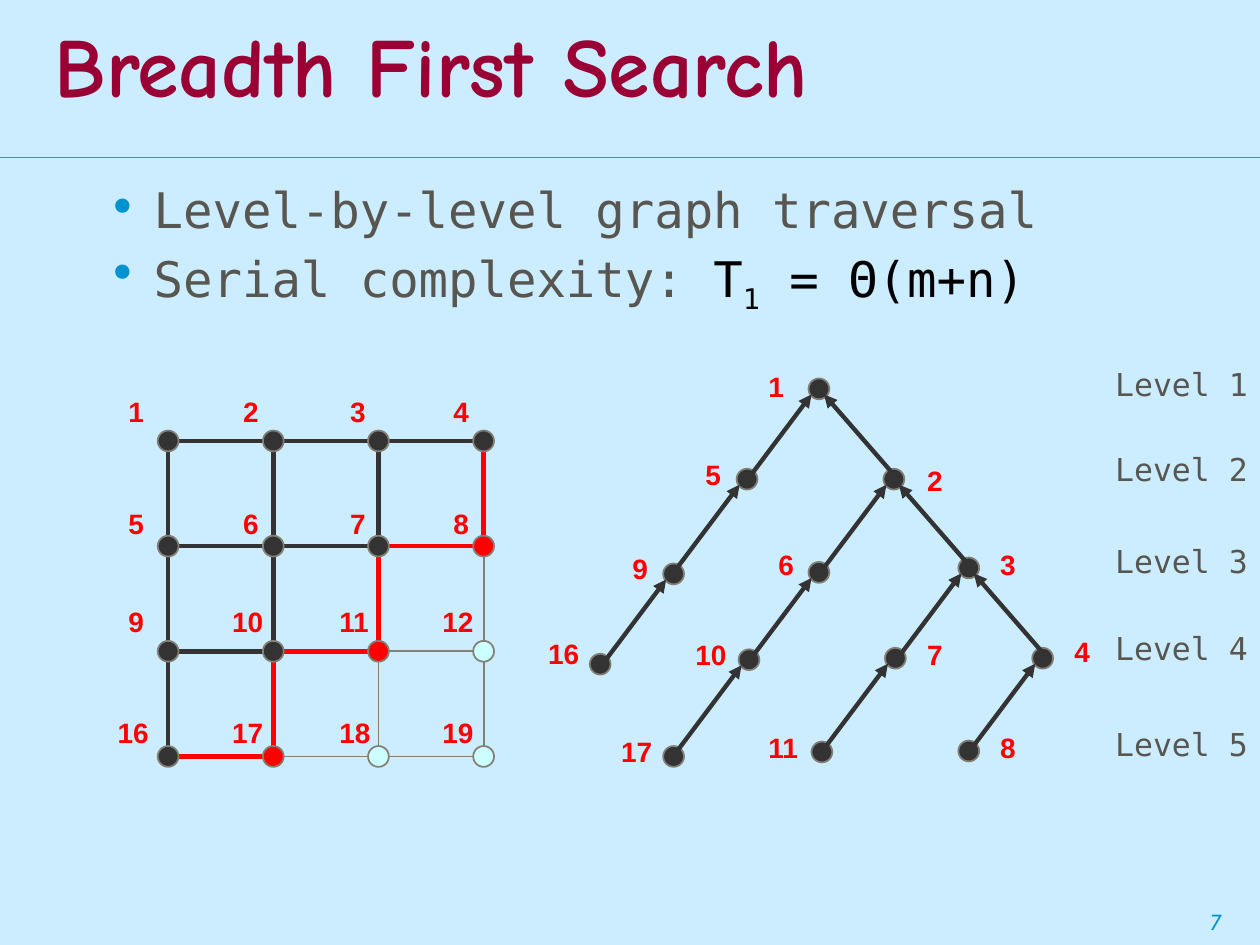
import pptx
import pptx.dml.color
import pptx.enum.shapes
import pptx.enum.text
import pptx.oxml.ns
import pptx.util
from pptx.util import Cm, Pt

RGBColor = pptx.dml.color.RGBColor
SKY = RGBColor(0xCC, 0xEC, 0xFF)
MAROON = RGBColor(0x99, 0x00, 0x33)
BLUE = RGBColor(0x00, 0x93, 0xD0)
BLACK = RGBColor(0, 0, 0)
TEXT_GRAY = RGBColor(0x58, 0x56, 0x50)
LINE_GRAY = RGBColor(0x82, 0x7F, 0x77)
DARK = RGBColor(0x33, 0x33, 0x33)
RED = RGBColor(0xFF, 0, 0)
PALE = RGBColor(0xCC, 0xFF, 0xFF)

MONO = "DejaVu Sans Mono"
TITLE_FONT = {"name": "Comic Neue", "size": Pt(48), "bold": True}
BODY_FONT = {"name": MONO, "size": Pt(28)}
LEVEL_FONT = {"name": MONO, "size": Pt(18)}
LABEL_FONT = {"name": "Arial", "size": Pt(16), "bold": True}
PAGE_FONT = {"name": MONO, "size": Pt(12), "italic": True}

NODE_SIZE = 0.42
RADIUS = NODE_SIZE / 2
GRID_LEFT, GRID_TOP, GRID_STEP = 3.39, 8.89, 2.12
GRID_NUMBERS = [[1, 2, 3, 4], [5, 6, 7, 8], [9, 10, 11, 12], [16, 17, 18, 19]]
LABEL_COLUMNS = [2.34, 4.65, 6.81, 8.89]
LABEL_ROWS = [7.82, 10.08, 12.07, 14.3]
FRONTIER = 3  # row + column of the first node on each newly explored edge

# number: (node centre, label corner)
TREE_NODES = {
    1: ((16.51, 7.84), (15.24, 7.32)),
    5: ((15.06, 9.66), (13.97, 9.09)),
    2: ((18.02, 9.66), (18.44, 9.22)),
    9: ((13.58, 11.57), (12.5, 11)),
    6: ((16.51, 11.54), (15.44, 10.92)),
    3: ((19.53, 11.45), (19.91, 10.92)),
    16: ((12.1, 13.39), (10.8, 12.7)),
    10: ((15.1, 13.3), (13.77, 12.73)),
    7: ((18.05, 13.27), (18.44, 12.73)),
    4: ((21.02, 13.27), (21.41, 12.67)),
    17: ((13.58, 15.25), (12.27, 14.68)),
    11: ((16.57, 15.16), (15.24, 14.6)),
    8: ((19.53, 15.14), (19.91, 14.6)),
}
LEFT_PARENTS = [1, 5, 2, 9, 6, 3, 4, 7, 10]
RIGHT_PARENTS = [1, 2, 3]
LEVEL_TOPS = [7.39, 9.09, 10.95, 12.7, 14.63]


def add_xml(parent, tag, **attributes):
    child = parent.makeelement(pptx.oxml.ns.qn(tag), attributes)
    parent.append(child)
    return child


class SlideBuilder:
    def __init__(self, presentation):
        self.slide = presentation.slides.add_slide(presentation.slide_layouts[5])
        self.slide.background.fill.solid()
        self.slide.background.fill.fore_color.rgb = SKY

    def run(self, paragraph, text, style, color):
        run = paragraph.add_run()
        run.text = text
        for name, value in style.items():
            setattr(run.font, name, value)
        run.font.color.rgb = color
        return run

    def title(self, text):
        shape = self.slide.shapes.title
        box = {"left": 0.85, "top": 0.18, "width": 24.55, "height": 2.54}
        for name, value in box.items():
            setattr(shape, name, Cm(value))
        shape.text_frame.vertical_anchor = pptx.enum.text.MSO_ANCHOR.MIDDLE
        paragraph = shape.text_frame.paragraphs[0]
        paragraph.alignment = pptx.enum.text.PP_ALIGN.LEFT
        paragraph.line_spacing = 0.86
        self.run(paragraph, text, TITLE_FONT, MAROON)

    def text_frame(self, left, top, width, height, wrap=True):
        shape = self.slide.shapes.add_textbox(Cm(left), Cm(top), Cm(width), Cm(height))
        shape.text_frame.word_wrap = wrap
        return shape.text_frame

    def text(self, text, box, style, color, line_spacing=1.0, wrap=True):
        frame = self.text_frame(*box, wrap=wrap)
        paragraph = frame.paragraphs[0]
        paragraph.line_spacing = line_spacing
        self.run(paragraph, text, style, color)
        return frame

    def bullet(self, paragraph):
        paragraph.line_spacing = 0.9
        paragraph.space_before = Pt(5.6)
        properties = paragraph._p.get_or_add_pPr()
        properties.set("marL", str(Cm(0.94)))
        properties.set("indent", str(-Cm(0.94)))
        color = add_xml(properties, "a:buClr")
        add_xml(color, "a:srgbClr", val=str(BLUE))
        add_xml(properties, "a:buChar", char="∙")

    def label(self, number, left, top):
        width = 0.81 if number < 10 else 1.14
        self.text(str(number), (left, top, width, 0.94), LABEL_FONT, RED, wrap=False)

    def node(self, x, y, color):
        shape = self.slide.shapes.add_shape(
            pptx.enum.shapes.MSO_SHAPE.OVAL,
            Cm(x - RADIUS), Cm(y - RADIUS), Cm(NODE_SIZE), Cm(NODE_SIZE))
        shape.shadow.inherit = False
        shape.fill.solid()
        shape.fill.fore_color.rgb = color
        shape.line.color.rgb = LINE_GRAY
        shape.line.width = Pt(1)

    def line(self, start, end, color, width, arrow=False):
        connector = self.slide.shapes.add_connector(
            pptx.enum.shapes.MSO_CONNECTOR.STRAIGHT, *map(Cm, (*start, *end)))
        connector.line.color.rgb = color
        connector.line.width = Pt(width)
        if arrow:
            add_xml(connector.line._get_or_add_ln(), "a:headEnd", type="triangle")
        add_xml(connector._element.spPr, "a:effectLst")


def add_body(builder):
    frame = builder.text_frame(1.91, 3.63, 21.56, 13.94)
    first, second = frame.paragraphs[0], frame.add_paragraph()
    for paragraph in (first, second):
        builder.bullet(paragraph)
    builder.run(first, "Level-by-level graph traversal", BODY_FONT, TEXT_GRAY)
    builder.run(second, "Serial complexity: ", BODY_FONT, TEXT_GRAY)
    builder.run(second, "T", BODY_FONT, BLACK)
    subscript = builder.run(second, "1", BODY_FONT, BLACK)
    subscript._r.get_or_add_rPr().set("baseline", "-25000")
    builder.run(second, " = Θ(m+n)", BODY_FONT, BLACK)


def add_grid(builder):
    places = [GRID_STEP * index for index in range(4)]
    for place in places:
        x, y = GRID_LEFT + place, GRID_TOP + place
        builder.line((x, GRID_TOP), (x, GRID_TOP + places[-1]), LINE_GRAY, 1)
        builder.line((GRID_LEFT, y), (GRID_LEFT + places[-1], y), LINE_GRAY, 1)

    for row, numbers in enumerate(GRID_NUMBERS):
        for column, number in enumerate(numbers):
            x, y = GRID_LEFT + places[column], GRID_TOP + places[row]
            distance = row + column
            if distance <= FRONTIER:
                color = RED if distance == FRONTIER else DARK
                near, far = RADIUS, GRID_STEP - RADIUS
                if column < 3:
                    builder.line((x + near, y), (x + far, y), color, 2.5)
                if row < 3:
                    builder.line((x, y + near), (x, y + far), color, 2.5)
                fill = DARK
            else:
                fill = RED if distance == FRONTIER + 1 else PALE
            builder.node(x, y, fill)
            shift = 0.22 if number >= 10 else 0
            builder.label(number, LABEL_COLUMNS[column] - shift, LABEL_ROWS[row])


def add_tree(builder):
    for number, (center, corner) in TREE_NODES.items():
        builder.node(*center, DARK)
        builder.label(number, *corner)
    for parents, offset, run in ((LEFT_PARENTS, -0.15, -1.27), (RIGHT_PARENTS, 0.1, 1.47)):
        for parent in parents:
            x, y = TREE_NODES[parent][0]
            start = (x + offset, y + 0.11)
            end = (start[0] + run, start[1] + 1.69)
            builder.line(start, end, DARK, 2.5, arrow=True)
    for level, top in enumerate(LEVEL_TOPS, start=1):
        builder.text(f"Level {level}", (22.23, top, 3.81, 0.86), LEVEL_FONT, TEXT_GRAY, 0.8)


def main():
    presentation = pptx.Presentation()
    presentation.slide_width, presentation.slide_height = Cm(25.4), Cm(19.05)
    builder = SlideBuilder(presentation)
    builder.line((0, 3.18), (25.4, 3.18), LINE_GRAY, 0.75)
    builder.title("Breadth First Search")
    add_body(builder)
    add_grid(builder)
    add_tree(builder)
    page = builder.text("7", (24.13, 18.21, 1.27, 0.76), PAGE_FONT, BLUE)
    page.vertical_anchor = pptx.enum.text.MSO_ANCHOR.BOTTOM
    presentation.save("out.pptx")


if __name__ == "__main__":
    main()
